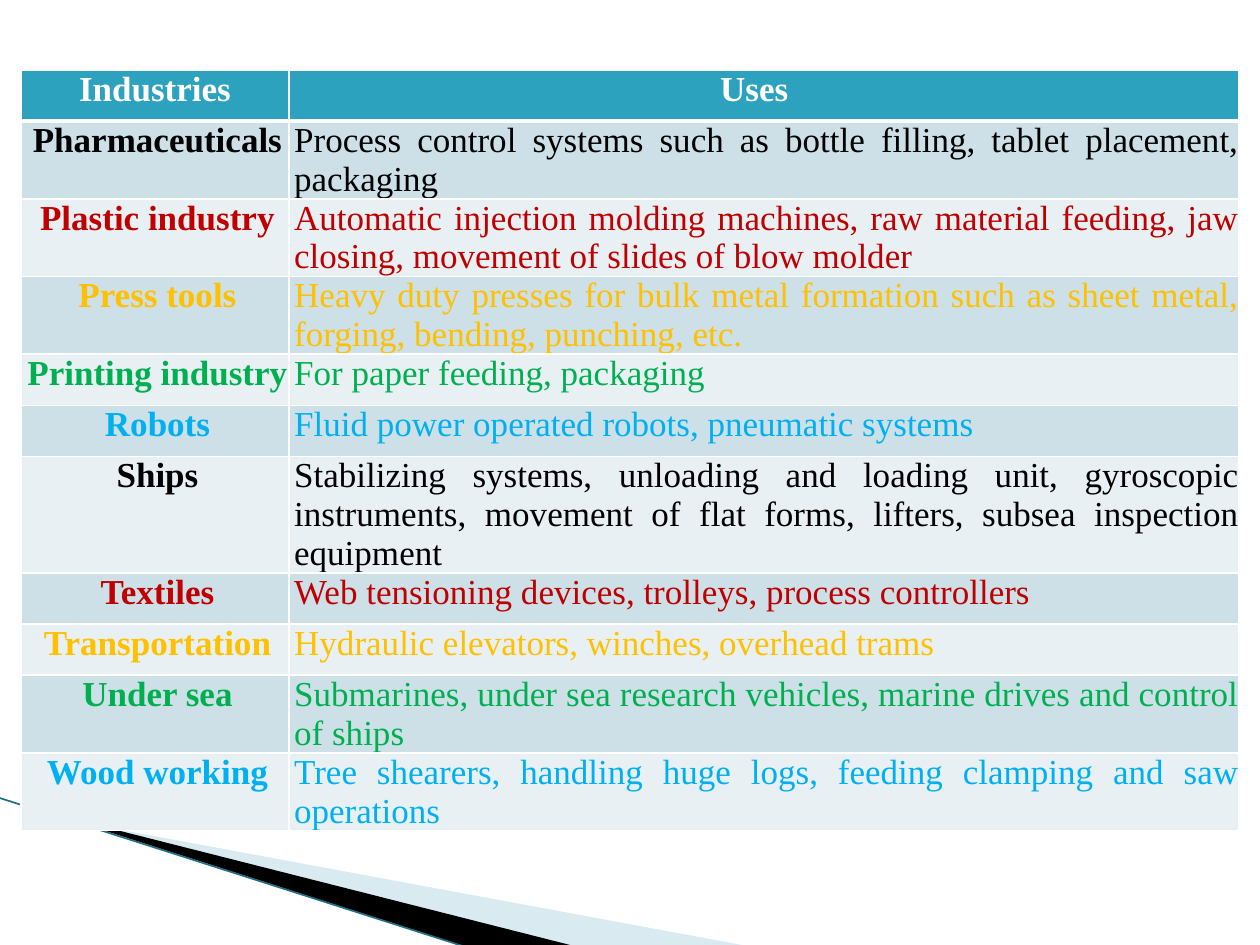
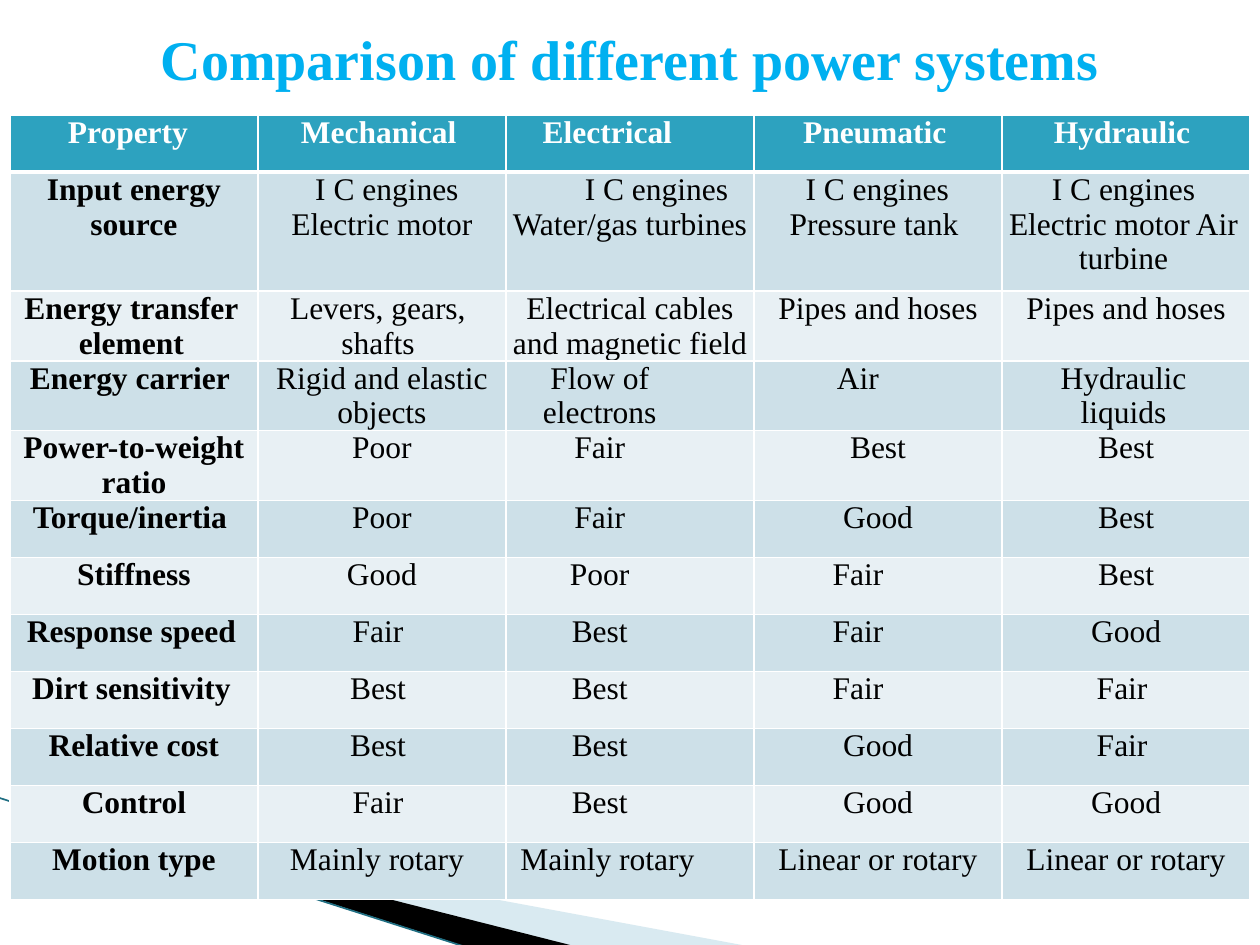
from dataclasses import dataclass
from typing import NamedTuple

from lxml import etree
from pptx import Presentation
from pptx.dml.color import RGBColor
from pptx.enum import text as t
from pptx.enum.shapes import MSO_CONNECTOR
from pptx.oxml import ns
from pptx.util import Cm, Pt


@dataclass(frozen=True)
class Theme:
    font: str = "Times New Roman"
    white: str = "FFFFFF"
    black: str = "000000"
    red: str = "C00000"
    amber: str = "FFC000"
    green: str = "00B050"
    sky: str = "00B0F0"
    header: str = "2DA2BF"
    bands: tuple = ("CDE0E8", "E8F0F4")
    wedge: str = "A0CBDC"
    edge: str = "1F6E82"
    title_size: float = 32
    uses_size: float = 20
    compare_size: float = 18
    grid: float = 1
    header_rule: float = 3


class Cell(NamedTuple):
    """Table text with its paragraph indents in centimetres."""
    text: str
    right: float = 0
    left: float = 0
    first: float = 0
    color: str = "000000"
    align: t.PP_ALIGN = t.PP_ALIGN.CENTER


class Wedge(NamedTuple):
    """Outline on the slide, and the frame that holds it, in centimetres."""
    points: tuple
    frame: tuple
    color: str
    alpha: int


class Layout(NamedTuple):
    """Place and measures of a table in centimetres."""
    left: float
    top: float
    cols: tuple
    rows: tuple
    size: float


TH = Theme()

# Corner decoration
WEDGES = (
    Wedge(((1.4, 16.54), (15.11, 19.08), (11.58, 19.08), (1.4, 16.51)),
          (1.98, 13.89, 10.57, 4.01), TH.wedge, 40),
    Wedge(((1.35, 16.48), (11.61, 19.08), (9.45, 19.1), (1.37, 16.51)),
          (-0.15, 16.08, 10.57, 2.34), TH.black, 100),
)
EDGE = (-0.03, 16.08, 9.42, 19.1)

# Industries and their uses
USES = (
    ("Pharmaceuticals",
     "Process control systems such as bottle filling, tablet placement, packaging"),
    ("Plastic industry",
     "Automatic injection molding machines, raw material feeding, jaw closing, "
     "movement of slides of blow molder"),
    ("Press tools",
     "Heavy duty presses for bulk metal formation such as sheet metal, forging, "
     "bending, punching, etc."),
    ("Printing industry", "For paper feeding, packaging"),
    ("Robots", "Fluid power operated robots, pneumatic systems"),
    ("Ships",
     "Stabilizing systems, unloading and loading unit, gyroscopic instruments, "
     "movement of flat forms, lifters, subsea inspection equipment"),
    ("Textiles", "Web tensioning devices, trolleys, process controllers"),
    ("Transportation", "Hydraulic elevators, winches, overhead trams"),
    ("Under sea",
     "Submarines, under sea research vehicles, marine drives and control of ships"),
    ("Wood working",
     "Tree shearers, handling huge logs, feeding clamping and saw operations"),
)
USES_LAYOUT = Layout(0.42, 1.41, (5.41, 19.15), (1.03,) * 11, TH.uses_size)

# Power systems; right indents pull some entries off the column centre
NEAR, MID, WIDE, FAR = 0.16, 0.81, 0.91, 1.22
FAIR = Cell("Fair", NEAR)
BEST = Cell("Best", NEAR)
AIR_FAIR = Cell("Fair", MID)
COMPARISON = (
    (Cell("Property", 0.24), Cell("Mechanical", 0.13), Cell("Electrical", WIDE),
     Cell("Pneumatic", 0.13), Cell("Hydraulic", NEAR)),
    ("Input energy source", Cell("I C engines Electric motor", first=0.2),
     Cell("I C engines Water/gas turbines", first=1.07),
     Cell("I C engines Pressure tank", NEAR, first=0.13),
     Cell("I C engines\nElectric motor Air turbine", 0.1)),
    (Cell("Energy transfer\nelement", 0.1), Cell("Levers, gears,\nshafts", NEAR),
     "Electrical cables\nand magnetic field", "Pipes and hoses", "Pipes and hoses"),
    (Cell("Energy carrier", NEAR), "Rigid and elastic\nobjects",
     Cell("Flow of\nelectrons", FAR), Cell("Air", MID),
     Cell("Hydraulic\nliquids", 0.1)),
    ("Power-to-weight\nratio", "Poor", Cell("Fair", FAR), "Best", "Best"),
    (Cell("Torque/inertia", NEAR), "Poor", Cell("Fair", FAR), "Good", "Best"),
    ("Stiffness", "Good", Cell("Poor", FAR), AIR_FAIR, "Best"),
    (Cell("Response speed", 0.1), FAIR, Cell("Best", FAR), AIR_FAIR, "Good"),
    (Cell("Dirt sensitivity", 0.1), BEST, Cell("Best", FAR), AIR_FAIR, FAIR),
    ("Relative cost", BEST, Cell("Best", FAR), "Good", FAIR),
    ("Control", FAIR, Cell("Best", FAR), "Good", "Good"),
    ("Motion type", Cell("Mainly rotary", 0.2), Cell("Mainly rotary", WIDE),
     "Linear or rotary", "Linear or rotary"),
)
COMPARE_LAYOUT = Layout(0.2, 2.32, (5,) * 5, (1.15, 2.4) + (1.15,) * 10,
                        TH.compare_size)


def rgb(color: str) -> RGBColor:
    return RGBColor.from_string(color)


def write(tf, text: str, *, size: float, color: str, bold: bool = False,
          align=t.PP_ALIGN.CENTER, left: float = 0, right: float = 0,
          first: float = 0) -> None:
    """Write one paragraph per line of text."""
    for i, line in enumerate(text.split("\n")):
        p = tf.add_paragraph() if i else tf.paragraphs[0]
        p.alignment = align
        pPr = p._p.get_or_add_pPr()
        for name, value in (("marL", left), ("marR", right), ("indent", first)):
            pPr.set(name, str(int(Cm(value))))
        r = p.add_run()
        r.text = line
        r.font.name, r.font.size, r.font.bold = TH.font, Pt(size), bold
        r.font.color.rgb = rgb(color)


def reframe(sp, frame: tuple) -> None:
    """Change the frame of a freeform while its outline stays in place."""
    left, top, width, height = map(Cm, frame)
    outline = sp._element.spPr.find(".//" + ns.qn("a:path"))
    for pt in outline.iter(ns.qn("a:pt")):
        pt.set("x", str(int(pt.get("x")) + sp.left - left))
        pt.set("y", str(int(pt.get("y")) + sp.top - top))
    outline.set("w", str(int(width)))
    outline.set("h", str(int(height)))
    sp.left, sp.top, sp.width, sp.height = left, top, width, height


def decorate_master(prs, slide) -> None:
    """Draw the corner wedges and move them to the master, behind everything."""
    drawn = []
    for wedge in WEDGES:
        points = [(Cm(x), Cm(y)) for x, y in wedge.points]
        builder = slide.shapes.build_freeform(*points[0])
        builder.add_line_segments(points[1:], close=True)
        sp = builder.convert_to_shape()
        reframe(sp, wedge.frame)
        sp.shadow.inherit = False
        sp.fill.solid()
        sp.fill.fore_color.rgb = rgb(wedge.color)
        sp.line.fill.background()
        clr = sp._element.spPr.find(".//" + ns.qn("a:srgbClr"))
        etree.SubElement(clr, ns.qn("a:alpha"), val=str(wedge.alpha * 1000))
        drawn.append(sp)

    edge = slide.shapes.add_connector(MSO_CONNECTOR.STRAIGHT, *map(Cm, EDGE))
    edge.line.color.rgb, edge.line.width = rgb(TH.edge), Pt(0.95)
    etree.SubElement(edge._element.spPr, ns.qn("a:effectLst"))
    drawn.append(edge)

    tree = prs.slide_master.shapes.element
    for i, sp in enumerate(drawn):
        sp._element.xpath(".//p:cNvPr")[0].set("id", str(100 + i))
        tree.insert(2 + i, sp._element)


def set_borders(cell, top: float, bottom: float) -> None:
    tcPr = cell._tc.get_or_add_tcPr()
    widths = {"lnL": TH.grid, "lnR": TH.grid, "lnT": top, "lnB": bottom}
    for tag, width in widths.items():
        ln = etree.SubElement(tcPr, ns.qn("a:" + tag), w=str(int(Pt(width))))
        fill = etree.SubElement(ln, ns.qn("a:solidFill"))
        etree.SubElement(fill, ns.qn("a:srgbClr"), val=TH.white)


def draw_table(slide, rows, layout: Layout) -> None:
    frame = slide.shapes.add_table(
        len(rows), len(layout.cols), Cm(layout.left), Cm(layout.top),
        Cm(sum(layout.cols)), Cm(sum(layout.rows)))
    table = frame.table
    for column, width in zip(table.columns, layout.cols):
        column.width = Cm(width)
    for row, height in zip(table.rows, layout.rows):
        row.height = Cm(height)

    for i, row in enumerate(rows):
        for j, entry in enumerate(row):
            item = Cell(entry) if isinstance(entry, str) else entry
            cell = table.cell(i, j)
            cell.margin_left = cell.margin_right = 0
            cell.margin_top = cell.margin_bottom = 0
            set_borders(cell, TH.header_rule if i == 1 else TH.grid,
                        TH.header_rule if i == 0 else TH.grid)
            cell.fill.solid()
            cell.fill.fore_color.rgb = rgb(TH.bands[(i - 1) % 2] if i else TH.header)
            write(cell.text_frame, item.text, size=layout.size,
                  color=item.color if i else TH.white, bold=i == 0 or j == 0,
                  align=item.align, left=item.left, right=item.right,
                  first=item.first)


def uses_rows() -> list:
    """Colour the industries in a repeating cycle."""
    cycle = (TH.black, TH.red, TH.amber, TH.green, TH.sky)
    rows = [("Industries", Cell("Uses", 0.4))]
    for i, (industry, use) in enumerate(USES):
        color = cycle[i % len(cycle)]
        rows.append((Cell(industry, left=0.1, color=color),
                     Cell(use, left=0.1, color=color, align=t.PP_ALIGN.JUSTIFY)))
    return rows


def draw_title(slide, text: str) -> None:
    title = slide.shapes.title
    title.left, title.top, title.width, title.height = 0, 0, Cm(25.4), Cm(2.34)
    tf = title.text_frame
    tf.word_wrap = True
    tf.auto_size = t.MSO_AUTO_SIZE.NONE
    tf.vertical_anchor = t.MSO_ANCHOR.MIDDLE
    write(tf, text, size=TH.title_size, color=TH.sky, bold=True)


def main() -> None:
    prs = Presentation()
    prs.slide_width, prs.slide_height = Cm(25.4), Cm(19.05)
    title_only, blank = prs.slide_layouts[5], prs.slide_layouts[6]

    # Industries and uses
    s = prs.slides.add_slide(blank)
    decorate_master(prs, s)
    draw_table(s, uses_rows(), USES_LAYOUT)

    # Comparison of power systems
    s = prs.slides.add_slide(title_only)
    draw_title(s, "Comparison of different power systems")
    draw_table(s, COMPARISON, COMPARE_LAYOUT)

    prs.save("out.pptx")


if __name__ == "__main__":
    main()
